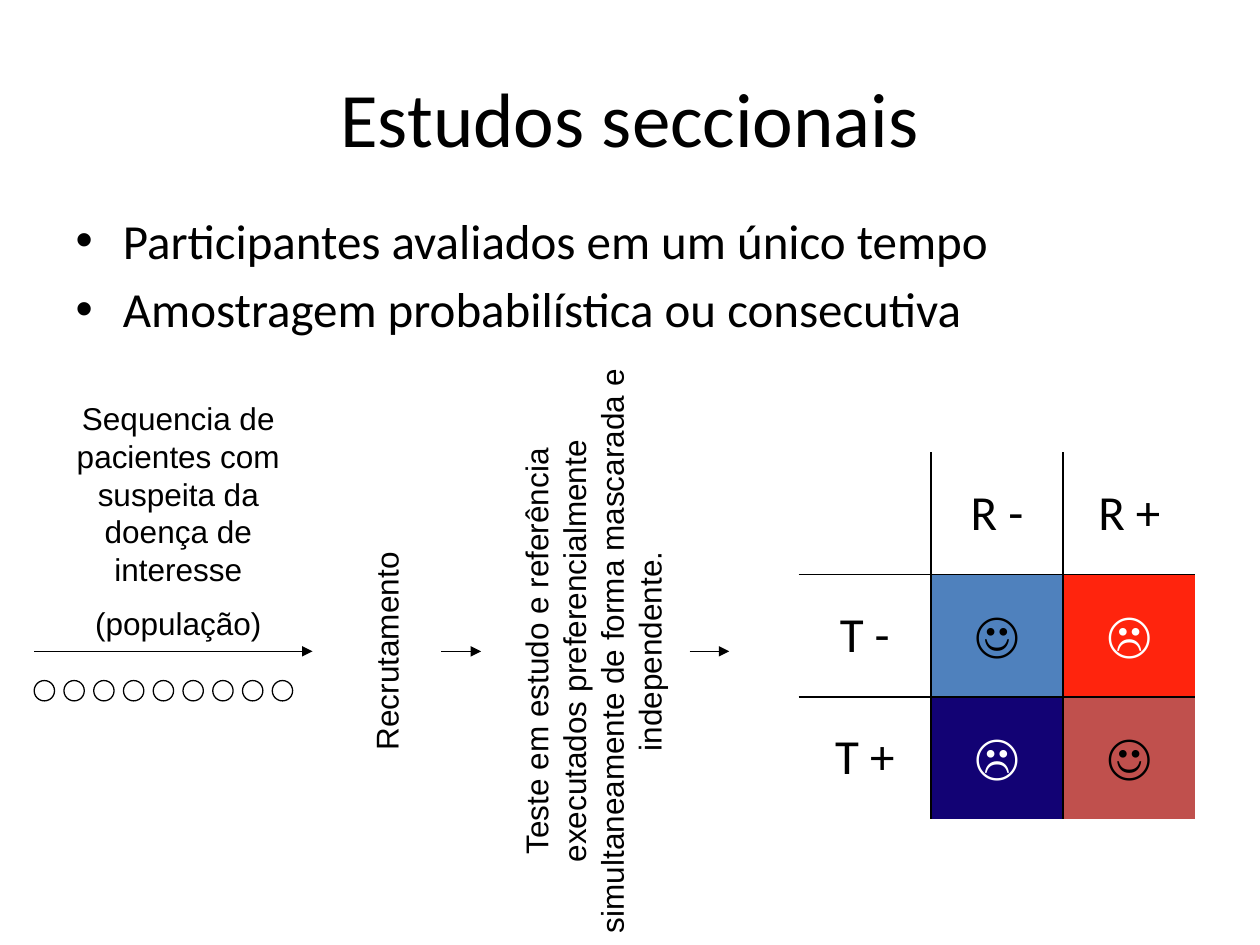
from lxml.etree import SubElement as Sub
from pptx import Presentation
from pptx.dml.color import RGBColor as RGB
from pptx.enum.shapes import MSO_CONNECTOR as Link, MSO_SHAPE as Form
from pptx.enum.text import MSO_ANCHOR as Anchor, PP_ALIGN as Align
from pptx.oxml.ns import qn
from pptx.util import Cm, Pt

BLACK = RGB(0, 0, 0)
WHITE = RGB(255, 255, 255)
BLUE = RGB(0x4F, 0x81, 0xBD)
RED = RGB(0xFF, 0x24, 0x0D)
NAVY = RGB(0x12, 0x02, 0x74)
BRICK = RGB(0xC0, 0x50, 0x4D)


def write(frame, *lines, font="Calibri", size=28, color=BLACK, align=None, gap=None):
    """Write one paragraph per line, with gap points between them."""
    for i, line in enumerate(lines):
        par = frame.add_paragraph() if i else frame.paragraphs[0]
        par.text = line
        if align is not None:
            par.alignment = align
        if i and gap is not None:
            par.space_before = Pt(gap)
        par.font.name = font
        par.font.size = Pt(size)
        par.font.color.rgb = color


def edge(cell, side, shown):
    """Draw or clear one border; sides go in the order L, R, T, B."""
    line = Sub(cell._tc.get_or_add_tcPr(), qn(f"a:ln{side}"), w=str(Pt(1)))
    if shown:
        fill = Sub(line, qn("a:solidFill"))
        Sub(fill, qn("a:srgbClr"), val=str(BLACK))
    else:
        Sub(line, qn("a:noFill"))


class Page:
    font = "Arial"
    size = 18
    width = Pt(0.75)

    def __init__(self, slide):
        self.slide = slide
        self.shapes = slide.shapes

    def holder(self, index, box, *lines, **style):
        item = self.slide.placeholders[index]
        item.left, item.top, item.width, item.height = map(Cm, box)
        write(item.text_frame, *lines, **style)

    def label(self, box, *lines, turn=0):
        item = self.shapes.add_textbox(*map(Cm, box))
        item.rotation = turn
        item.text_frame.word_wrap = True
        write(item.text_frame, *lines, font=self.font, size=self.size,
              align=Align.CENTER, gap=self.size / 2)

    def arrow(self, start, end, y):
        item = self.shapes.add_connector(
            Link.STRAIGHT, Cm(start), Cm(y), Cm(end), Cm(y))
        item.line.color.rgb = BLACK
        item.line.width = self.width
        Sub(item.line._get_or_add_ln(), qn("a:tailEnd"), type="triangle")
        Sub(item._element.spPr, qn("a:effectLst"))

    def circle(self, x, y, size):
        item = self.shapes.add_shape(Form.OVAL, Cm(x), Cm(y), Cm(size), Cm(size))
        item.shadow.inherit = False
        item.fill.background()
        item.line.color.rgb = BLACK
        item.line.width = self.width

    def grid(self, box, rows):
        """Draw a table with inner borders; a cell is (text, fill, ink)."""
        high, wide = len(rows), len(rows[0])
        table = self.shapes.add_table(high, wide, *map(Cm, box)).table
        table.first_row = table.horz_banding = False
        for r, row in enumerate(rows):
            for c, (text, fill, ink) in enumerate(row):
                cell = table.cell(r, c)
                cell.vertical_anchor = Anchor.MIDDLE
                write(cell.text_frame, text, color=ink, align=Align.CENTER)
                for side, shown in zip("LRTB", (c > 0, c < wide - 1, r > 0, r < high - 1)):
                    edge(cell, side, shown)
                if fill is None:
                    cell.fill.background()
                else:
                    cell.fill.solid()
                    cell.fill.fore_color.rgb = fill


def main():
    deck = Presentation()
    deck.slide_width, deck.slide_height = Cm(25.4), Cm(19.05)
    page = Page(deck.slides.add_slide(deck.slide_layouts[1]))

    page.holder(0, (1.27, 0.76, 22.86, 3.18), "Estudos seccionais",
                size=44, align=Align.CENTER)
    page.holder(1, (1.27, 4.11, 22.86, 2.95),
                "Participantes avaliados em um único tempo",
                "Amostragem probabilística ou consecutiva")

    page.label((0.89, 7.92, 5.41, 5.26),
               "Sequencia de pacientes com suspeita da doença de interesse",
               "(população)")
    page.label((5.18, 12.62, 5.21, 1.02), "Recrutamento", turn=270)
    page.label((5.94, 11.48, 12.01, 3.3),
               "Teste em estudo e referência executados preferencialmente "
               "simultaneamente de forma mascarada e independente.", turn=270)

    for start, end in ((0.69, 6.3), (8.9, 9.7), (13.9, 14.7)):
        page.arrow(start, end, 13.13)
    for i in range(9):
        page.circle(0.69 + 0.6 * i, 13.72, 0.41)

    page.grid((16.1, 9.12, 8, 7.4), (
        (("", None, BLACK), ("R -", None, BLACK), ("R +", None, BLACK)),
        (("T -", None, BLACK), ("☺", BLUE, BLACK), ("☹", RED, WHITE)),
        (("T +", None, BLACK), ("☹", NAVY, WHITE), ("☺", BRICK, BLACK)),
    ))
    deck.save("out.pptx")


if __name__ == "__main__":
    main()
